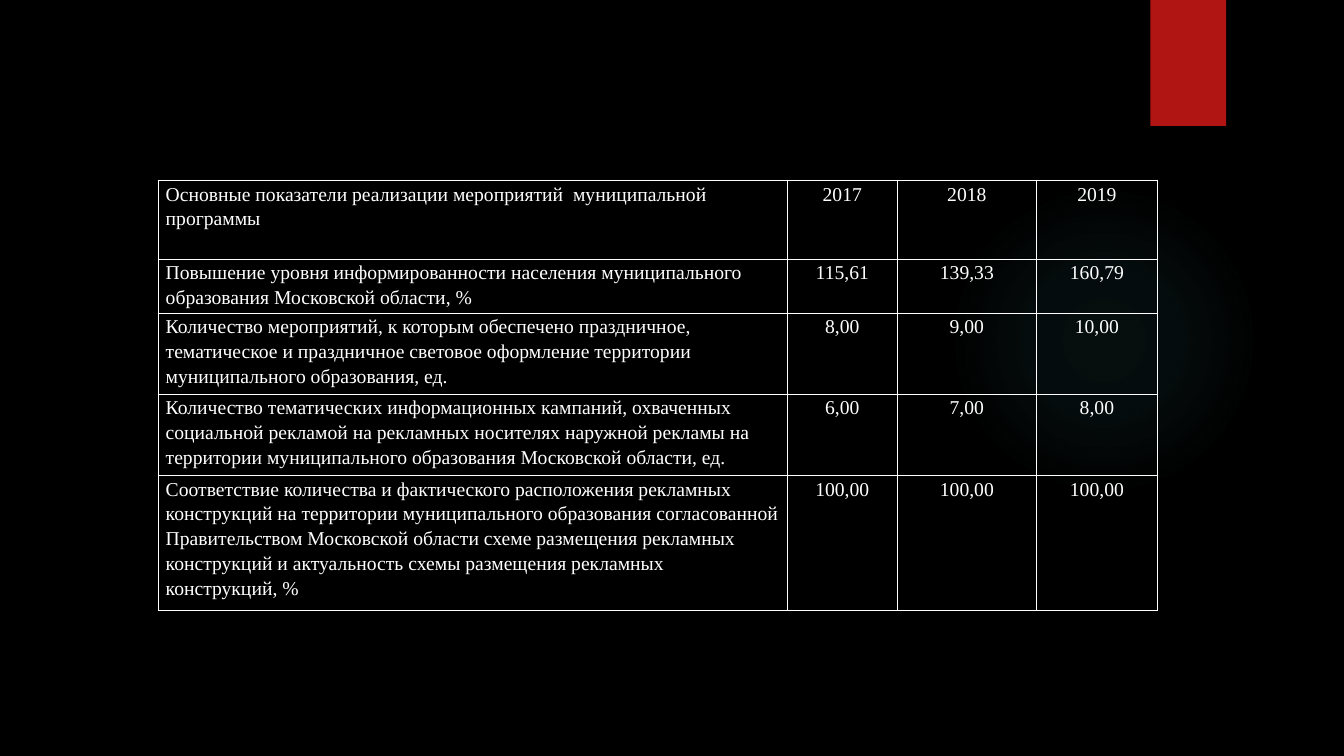
from dataclasses import dataclass
from lxml import etree
from pptx import Presentation
from pptx import util as u
from pptx.dml.color import RGBColor
from pptx.enum import shapes, text
from pptx.oxml import ns


@dataclass(frozen=True)
class Theme:
    back: str = "000000"
    ink: str = "FFFFFF"
    accent: str = "B01513"
    glow: str = "50B9C1"
    font: str = "Times New Roman"
    size: int = 14
    border: int = 1


class Deck:
    def __init__(self, theme):
        self.theme = theme
        self.prs = Presentation()
        self.prs.slide_width, self.prs.slide_height = u.Pt(960), u.Pt(540)
        self.slide = self.prs.slides.add_slide(self.prs.slide_layouts[6])
        fill = self.slide.background.fill
        fill.solid()
        fill.fore_color.rgb = RGBColor.from_string(theme.back)

    def shape(self, kind, *box):
        item = self.slide.shapes.add_shape(kind, *map(u.Pt, box))
        item.shadow.inherit = False
        item.line.fill.background()
        return item

    def block(self, color, *box):
        fill = self.shape(shapes.MSO_SHAPE.RECTANGLE, *box).fill
        fill.solid()
        fill.fore_color.rgb = RGBColor.from_string(color)

    def glow(self, stops, *box):
        item = self.shape(shapes.MSO_SHAPE.OVAL, *box)
        item.fill.background()
        marks = "".join(
            f'<a:gs pos="{pos * 1000}"><a:srgbClr val="{self.theme.glow}">'
            f'<a:alpha val="{alpha * 1000}"/></a:srgbClr></a:gs>'
            for pos, alpha in stops)
        grad = etree.fromstring(
            f'<a:gradFill {ns.nsdecls("a")}><a:gsLst>{marks}</a:gsLst>'
            '<a:path path="circle"><a:fillToRect l="50000" t="50000" '
            'r="50000" b="50000"/></a:path></a:gradFill>')
        props = item.element.spPr
        props.replace(props.find(ns.qn("a:noFill")), grad)

    def table(self, left, top, widths, heights, rows):
        grid = self.slide.shapes.add_table(
            len(rows), len(widths), u.Pt(left), u.Pt(top),
            u.Pt(sum(widths)), u.Pt(sum(heights))).table
        grid.first_row = grid.horz_banding = False
        for col, width in zip(grid.columns, widths):
            col.width = u.Pt(width)
        for row, height, values in zip(grid.rows, heights, rows):
            row.height = u.Pt(height)
            for i, (cell, value) in enumerate(zip(row.cells, values)):
                self.cell(cell, value, centred=i > 0)

    def cell(self, cell, value, centred):
        cell.margin_left = cell.margin_right = u.Pt(5.4)
        cell.margin_top = cell.margin_bottom = 0
        cell.fill.background()
        self.frame(cell)
        cell.text = value
        para = cell.text_frame.paragraphs[0]
        para.line_spacing = 1.15
        para.alignment = text.PP_ALIGN.CENTER if centred else text.PP_ALIGN.LEFT
        para.font.name = self.theme.font
        para.font.size = u.Pt(self.theme.size)
        para.font.color.rgb = RGBColor.from_string(self.theme.ink)

    def frame(self, cell):
        props = cell._tc.get_or_add_tcPr()
        for i, side in enumerate("LRTB"):
            props.insert(i, etree.fromstring(
                f'<a:ln{side} {ns.nsdecls("a")} w="{u.Pt(self.theme.border)}">'
                f'<a:solidFill><a:srgbClr val="{self.theme.ink}"/></a:solidFill>'
                f'</a:ln{side}>'))


def main():
    theme = Theme()
    deck = Deck(theme)

    # Backdrop: soft glow and red tab
    deck.glow([(0, 7), (36, 6), (69, 0)], 677.5, 131.8, 221.8, 221.8)
    deck.block(theme.accent, 821.8, 0, 54, 90)

    # Programme indicators by year
    rows = [
        ("Основные показатели реализации мероприятий  муниципальной программы",
         "2017", "2018", "2019"),
        ("Повышение уровня информированности населения муниципального "
         "образования Московской области, %",
         "115,61", "139,33", "160,79"),
        ("Количество мероприятий, к которым обеспечено праздничное, "
         "тематическое и праздничное световое оформление территории "
         "муниципального образования, ед.",
         "8,00", "9,00", "10,00"),
        ("Количество тематических информационных кампаний, охваченных "
         "социальной рекламой на рекламных носителях наружной рекламы на "
         "территории муниципального образования Московской области, ед.",
         "6,00", "7,00", "8,00"),
        ("Соответствие количества и фактического расположения рекламных "
         "конструкций на территории муниципального образования согласованной "
         "Правительством Московской области схеме размещения рекламных "
         "конструкций и актуальность схемы размещения рекламных "
         "конструкций, %",
         "100,00", "100,00", "100,00"),
    ]
    deck.table(113, 128.8, [449.3, 78.8, 99.2, 86.6],
               [56.4, 38.6, 57.9, 57.9, 96.4], rows)

    deck.prs.save("out.pptx")


if __name__ == "__main__":
    main()
